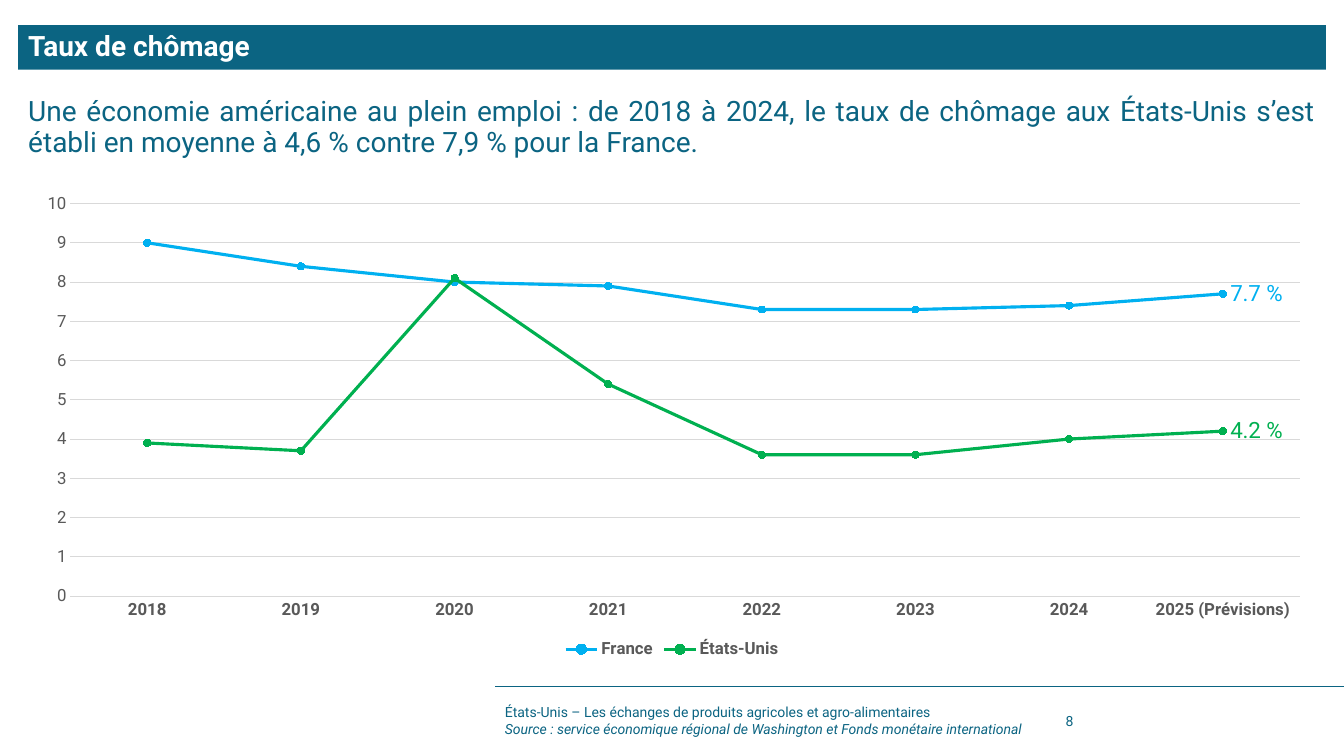
from dataclasses import dataclass

from lxml.etree import SubElement
from pptx import Presentation
from pptx.chart.data import CategoryChartData
from pptx.dml.color import RGBColor
from pptx.enum.chart import XL_CHART_TYPE as ChartType
from pptx.enum.chart import XL_LABEL_POSITION as LabelPosition
from pptx.enum.chart import XL_LEGEND_POSITION as LegendPosition
from pptx.enum.chart import XL_MARKER_STYLE as MarkerStyle
from pptx.enum.chart import XL_TICK_MARK as TickMark
from pptx.enum.shapes import MSO_CONNECTOR as Connector
from pptx.enum.text import MSO_ANCHOR as Anchor
from pptx.enum.text import MSO_AUTO_SIZE as AutoSize
from pptx.enum.text import PP_ALIGN as Align
from pptx.oxml.ns import qn
from pptx.util import Emu, Pt

FONT = "Roboto"
COLORS = {
    "teal": "0B6482",
    "white": "FFFFFF",
    "axis": "595959",
    "grid": "D9D9D9",
    "france": "00B0F0",
    "usa": "00B050",
}
EMU_PER_PX = 9144  # 100 px to the inch


@dataclass
class Box:
    left: int
    top: int
    width: int
    height: int

    def emu(self) -> list[Emu]:
        return [px(n) for n in (self.left, self.top, self.width, self.height)]


@dataclass
class Country:
    name: str
    color: str
    rates: list[float]


YEARS = [str(year) for year in range(2018, 2025)] + ["2025 (Prévisions)"]
COUNTRIES = [
    Country("France", "france", [9, 8.4, 8, 7.9, 7.3, 7.3, 7.4, 7.7]),
    Country("États-Unis", "usa", [3.9, 3.7, 8.1, 5.4, 3.6, 3.6, 4, 4.2]),
]


def px(length: int) -> Emu:
    return Emu(length * EMU_PER_PX)


def rgb(name: str) -> RGBColor:
    return RGBColor.from_string(COLORS[name])


def style_font(font, size: int, color: str, bold=False, italic=False) -> None:
    font.name = FONT
    font.size = Pt(size)
    font.bold = bold
    font.italic = italic
    font.color.rgb = rgb(color)


def style_line(line, color: str, width: float) -> None:
    line.color.rgb = rgb(color)
    line.width = Pt(width)


def write(paragraph, text: str, *, size=10, color="teal", bold=False,
          italic=False, align=Align.LEFT, spacing=1.0) -> None:
    properties = paragraph._p.get_or_add_pPr()
    properties.set("marL", "0")
    properties.set("indent", "0")
    SubElement(properties, qn("a:buNone"))
    paragraph.alignment = align
    paragraph.line_spacing = spacing
    paragraph.space_before = Pt(0)
    run = paragraph.add_run()
    run.text = text
    style_font(run.font, size, color, bold, italic)


def place(shape, box: Box, anchor: Anchor):
    """Position a text shape and return its frame."""
    shape.left, shape.top, shape.width, shape.height = box.emu()
    frame = shape.text_frame
    frame.word_wrap = True
    frame.auto_size = AutoSize.NONE
    frame.vertical_anchor = anchor
    return frame


def add_footer_text(slide, box: Box):
    return place(slide.shapes.add_textbox(*box.emu()), box, Anchor.MIDDLE)


def fix_plot_area(chart, **fractions: float) -> None:
    plot_area = chart._chartSpace.chart.plotArea
    layout = plot_area.find(qn("c:layout"))
    if layout is None:
        layout = plot_area.makeelement(qn("c:layout"))
        plot_area.insert(0, layout)
    manual = SubElement(layout, qn("c:manualLayout"))
    settings = {"layoutTarget": "inner", "xMode": "edge", "yMode": "edge"}
    for tag, value in (settings | fractions).items():
        SubElement(manual, qn(f"c:{tag}")).set("val", str(value))


def add_rate_chart(slide, box: Box) -> None:
    rates = CategoryChartData()
    rates.categories = YEARS
    for country in COUNTRIES:
        rates.add_series(country.name, country.rates)
    chart = slide.shapes.add_chart(
        ChartType.LINE_MARKERS, *box.emu(), rates).chart
    chart.has_title = False
    style_font(chart.font, 12, "axis", bold=True)
    fix_plot_area(chart, x=0.04, y=0.04, w=0.94, h=0.82)

    # Legend
    chart.has_legend = True
    chart.legend.position = LegendPosition.BOTTOM
    chart.legend.include_in_layout = False
    style_font(chart.legend.font, 12, "axis", bold=True)

    # Axes
    year_axis, rate_axis = chart.category_axis, chart.value_axis
    for axis in (year_axis, rate_axis):
        axis.major_tick_mark = axis.minor_tick_mark = TickMark.NONE
        style_font(axis.tick_labels.font, 12, "axis", bold=axis is year_axis)
    style_line(year_axis.format.line, "grid", 0.75)
    rate_axis.format.line.fill.background()
    rate_axis.minimum_scale, rate_axis.maximum_scale = 0, 10
    rate_axis.major_unit = 1
    style_line(rate_axis.major_gridlines.format.line, "grid", 0.75)

    # Curves, each labelled at its last point
    plot = chart.plots[0]
    plot.vary_by_categories = False
    for country, curve in zip(COUNTRIES, plot.series):
        curve.smooth = False
        style_line(curve.format.line, country.color, 2.25)
        marker = curve.marker
        marker.style, marker.size = MarkerStyle.CIRCLE, 5
        marker.format.fill.solid()
        marker.format.fill.fore_color.rgb = rgb(country.color)
        style_line(marker.format.line, country.color, 0.75)
        label = curve.points[len(YEARS) - 1].data_label
        write(label.text_frame.paragraphs[0], f"{country.rates[-1]} %",
              size=16, color=country.color)
        label.position = LabelPosition.RIGHT


def main() -> None:
    deck = Presentation()
    deck.slide_width, deck.slide_height = px(1333), px(750)
    slide = deck.slides.add_slide(deck.slide_layouts[1])
    heading, summary = slide.placeholders

    # Heading band
    heading.fill.solid()
    heading.fill.fore_color.rgb = rgb("teal")
    frame = place(heading, Box(18, 25, 1297, 44), Anchor.MIDDLE)
    write(frame.paragraphs[0], "Taux de chômage",
          size=20, color="white", bold=True, spacing=0.9)

    # Summary
    frame = place(summary, Box(18, 92, 1297, 132), Anchor.TOP)
    write(frame.paragraphs[0],
          "Une économie américaine au plein emploi : de 2018 à 2024, le taux "
          "de chômage aux États-Unis s’est établi en moyenne à 4,6 % contre "
          "7,9 % pour la France.",
          size=20, align=Align.JUSTIFY, spacing=0.9)

    add_rate_chart(slide, Box(18, 183, 1297, 475))

    # Footer
    rule = slide.shapes.add_connector(
        Connector.STRAIGHT, px(1333), px(681), px(491), px(681))
    style_line(rule.line, "teal", 0.5)
    SubElement(rule._element.spPr, qn("a:effectLst"))
    frame = add_footer_text(slide, Box(491, 695, 543, 40))
    write(frame.paragraphs[0],
          "États-Unis – Les échanges de produits agricoles et "
          "agro-alimentaires")
    write(frame.add_paragraph(),
          "Source : service économique régional de Washington et Fonds "
          "monétaire international", italic=True)
    frame = add_footer_text(slide, Box(1047, 695, 99, 40))
    write(frame.paragraphs[0], "8")

    deck.save("out.pptx")


if __name__ == "__main__":
    main()
